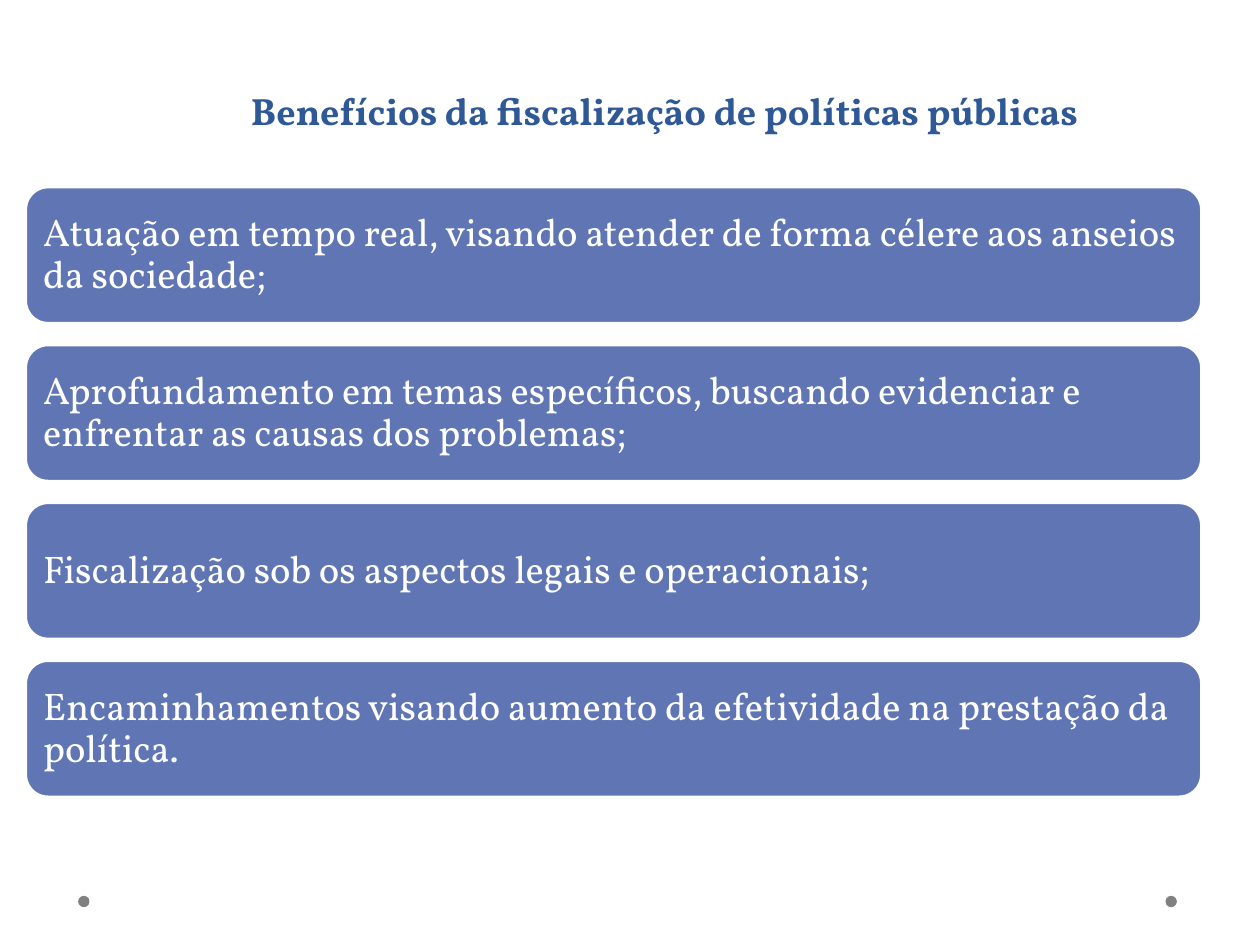
from dataclasses import dataclass

from pptx import Presentation
from pptx.dml.color import RGBColor as Rgb
from pptx.enum.shapes import MSO_SHAPE as Kind
from pptx.enum.text import MSO_ANCHOR as Anchor, PP_ALIGN as Align
from pptx.shapes.autoshape import Shape
from pptx.slide import Slide
from pptx.util import Inches, Pt


@dataclass(frozen=True)
class Theme:
    face: str = "Vollkorn"
    head: Rgb = Rgb(0x2F, 0x58, 0x97)
    card: Rgb = Rgb(0x60, 0x76, 0xB4)
    dot: Rgb = Rgb(0x80, 0x80, 0x80)
    white: Rgb = Rgb(0xFF, 0xFF, 0xFF)
    big: Pt = Pt(21.7)
    text: Pt = Pt(22)
    edge: Pt = Pt(2.25)


@dataclass(frozen=True)
class Box:
    left: float
    top: float
    width: float
    height: float

    def span(self) -> tuple:
        return tuple(map(Inches, (self.left, self.top, self.width, self.height)))


@dataclass(frozen=True)
class Card:
    box: Box
    text: str


THEME = Theme()
TITLE = "Benefícios da fiscalização de políticas públicas"
TEXTS = (
    "Atuação em tempo real, visando atender de forma célere aos anseios da sociedade;",
    "Aprofundamento em temas específicos, buscando evidenciar e enfrentar as causas dos problemas;",
    "Fiscalização sob os aspectos legais e operacionais;",
    "Encaminhamentos visando aumento da efetividade na prestação da política.",
)
TOP, STEP = 1.48, 1.253
CARDS = [Card(Box(0.2, TOP + i * STEP, 9.34, 1.09), text)
         for i, text in enumerate(TEXTS)]
DOTS = [Box(left, 7.11, 0.09, 0.09) for left in (0.62, 9.25)]


def apply(item: object, form: dict) -> None:
    for key, value in form.items():
        setattr(item, key, value)


def write(shape: Shape, text: str, frame: dict, para: dict, font: dict, tint: Rgb) -> None:
    body = shape.text_frame
    apply(body, {"word_wrap": True, **frame})
    body.text = text
    line = body.paragraphs[0]
    apply(line, para)
    apply(line.runs[0].font, {"name": THEME.face, **font})
    line.runs[0].font.color.rgb = tint


def add_form(slide: Slide, kind: Kind, box: Box, fill: Rgb) -> Shape:
    shape = slide.shapes.add_shape(kind, *box.span())
    shape.shadow.inherit = False
    shape.fill.solid()
    shape.fill.fore_color.rgb = fill
    return shape


def add_dot(slide: Slide, box: Box) -> None:
    add_form(slide, Kind.OVAL, box, THEME.dot).line.fill.background()


def add_title(slide: Slide) -> None:
    title = slide.shapes.title
    spots = ("left", "top", "width", "height")
    apply(title, dict(zip(spots, Box(1.85, 0.13, 6.85, 0.93).span())))
    write(title, TITLE,
          {"vertical_anchor": Anchor.BOTTOM, "margin_bottom": 0},
          {"alignment": Align.CENTER, "line_spacing": Pt(58)},
          {"size": THEME.big, "bold": True}, THEME.head)


def add_card(slide: Slide, card: Card) -> None:
    shape = add_form(slide, Kind.ROUNDED_RECTANGLE, card.box, THEME.card)
    shape.line.color.rgb = THEME.white
    shape.line.width = THEME.edge
    sides = ("left", "top", "right", "bottom")
    write(shape, card.text,
          {"vertical_anchor": Anchor.MIDDLE,
           **{f"margin_{side}": Inches(0.09) for side in sides}},
          {"alignment": Align.LEFT, "line_spacing": 0.9},
          {"size": THEME.text}, THEME.white)


def main() -> None:
    deck = Presentation()
    apply(deck, {"slide_width": Inches(10), "slide_height": Inches(7.5)})
    slide = deck.slides.add_slide(deck.slide_layouts[5])
    for dot in DOTS:
        add_dot(slide, dot)
    add_title(slide)
    for card in CARDS:
        add_card(slide, card)
    deck.save("out.pptx")


if __name__ == "__main__":
    main()
